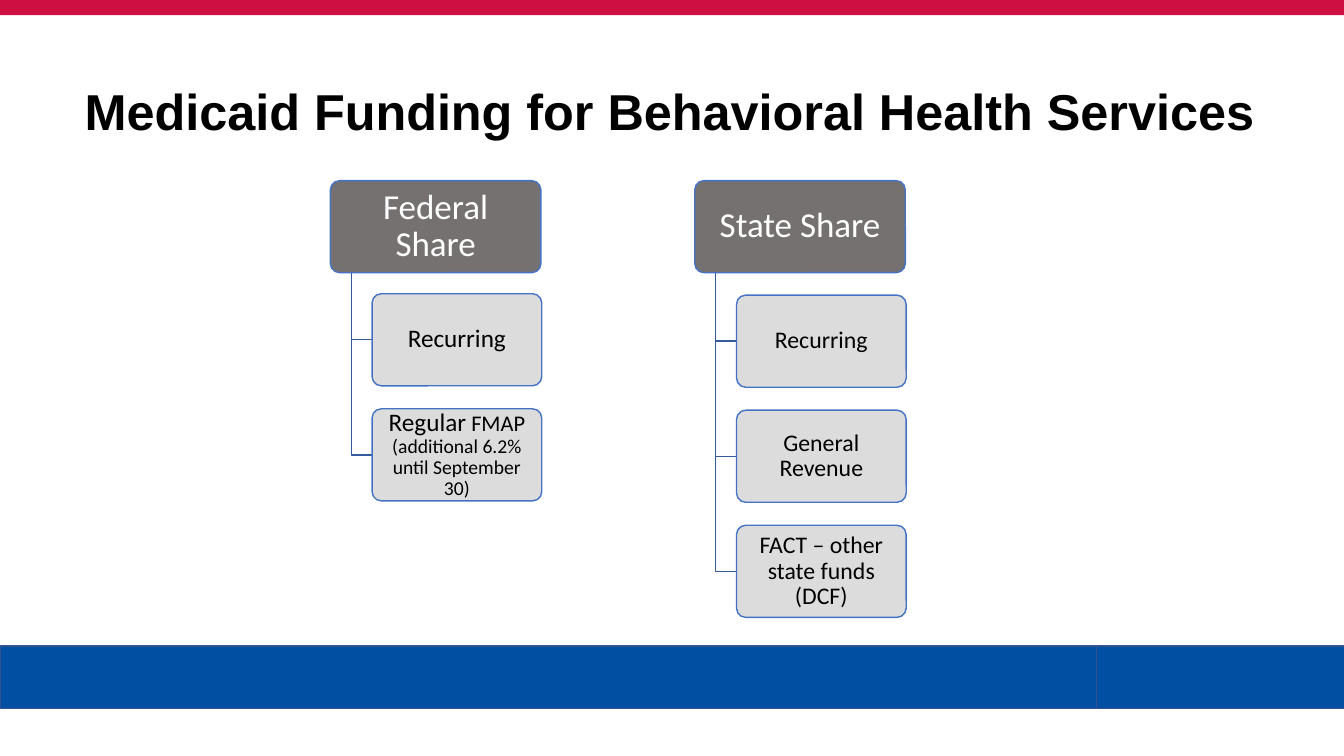
from dataclasses import dataclass

from lxml import etree
from pptx import Presentation
from pptx.dml.color import RGBColor
from pptx.enum.shapes import MSO_SHAPE
from pptx.enum.text import MSO_ANCHOR, PP_ALIGN
from pptx.oxml.ns import qn
from pptx.util import Pt

RECTANGLE = MSO_SHAPE.RECTANGLE
ROUNDED = MSO_SHAPE.ROUNDED_RECTANGLE
MIDDLE = MSO_ANCHOR.MIDDLE
LEFT, CENTER = PP_ALIGN.LEFT, PP_ALIGN.CENTER


@dataclass(frozen=True)
class Theme:
    """Colours, fonts and type sizes of the slide."""
    red: str = "CD1041"
    blue: str = "004FA2"
    band_line: str = "325491"
    head_fill: str = "767171"
    item_fill: str = "D9D9D9"
    box_line: str = "4472C4"
    branch: str = "365B9D"
    black: str = "000000"
    white: str = "FFFFFF"
    title_font: str = "Arial"
    body_font: str = "Calibri"
    title_size: float = 36
    head_size: float = 25
    federal_size: float = 18
    state_size: float = 17
    fmap_size: float = 16
    note_size: float = 14


THEME = Theme()
HEAD_TOP, HEAD_WIDTH, BOX_HEIGHT = 129, 150.4, 65.8
ITEM_INDENT, ITEM_WIDTH, ITEM_STEP = 29.8, 121.2, 82.2
TRUNK_INDENT = 15


def color(value):
    """Turn a hex string into a colour."""
    return RGBColor.from_string(value)


def add_span(para, text, size, ink, font, bold=False):
    """Append one formatted run to a paragraph."""
    span = para.add_run()
    span.text = text
    span.font.size = Pt(size)
    span.font.name = font
    span.font.bold = bold
    span.font.color.rgb = color(ink)


def add_panel(page, kind, left, top, width, height, fill, line=None):
    """Add a filled shape with an optional outline."""
    panel = page.shapes.add_shape(kind, Pt(left), Pt(top), Pt(width), Pt(height))
    panel.shadow.inherit = False
    panel.fill.solid()
    panel.fill.fore_color.rgb = color(fill)
    if line:
        panel.line.color.rgb = color(line)
        panel.line.width = Pt(1)
    else:
        panel.line.fill.background()
    return panel


def add_box(page, left, top, width, fill, ink, spans):
    """Add a rounded box with centred text."""
    box = add_panel(page, ROUNDED, left, top, width, BOX_HEIGHT, fill, THEME.box_line)
    box.adjustments[0] = 0.1
    frame = box.text_frame
    frame.word_wrap = True
    frame.vertical_anchor = MIDDLE
    frame.margin_left = frame.margin_right = Pt(5)
    frame.margin_top = frame.margin_bottom = Pt(3.5)
    para = frame.paragraphs[0]
    para.alignment = CENTER
    para.line_spacing = 0.9
    for text, size in spans:
        add_span(para, text, size, ink, THEME.body_font)
    return box


def set_opacity(box, percent):
    """Make the solid fill of a box partly transparent."""
    tint = box.fill._xPr.find(qn("a:solidFill"))[0]
    etree.SubElement(tint, qn("a:alpha")).set("val", str(percent * 1000))


def add_branch(page, left, top, right, bottom):
    """Draw an elbow line down and then right."""
    builder = page.shapes.build_freeform(Pt(left), Pt(top))
    corners = [(Pt(left), Pt(bottom)), (Pt(right), Pt(bottom))]
    builder.add_line_segments(corners, close=False)
    branch = builder.convert_to_shape()
    branch.shadow.inherit = False
    branch.fill.background()
    branch.line.color.rgb = color(THEME.branch)
    branch.line.width = Pt(1)


def add_share(page, left, first_top, name, items):
    """Add a heading box with its items hanging below."""
    add_box(page, left, HEAD_TOP, HEAD_WIDTH, THEME.head_fill, THEME.white,
            [(name, THEME.head_size)])
    item_left = left + ITEM_INDENT
    for index, spans in enumerate(items):
        top = first_top + index * ITEM_STEP
        add_branch(page, left + TRUNK_INDENT, HEAD_TOP + BOX_HEIGHT,
                   item_left, top + BOX_HEIGHT / 2)
        box = add_box(page, item_left, top, ITEM_WIDTH, THEME.item_fill,
                      THEME.black, spans)
        set_opacity(box, 90)


def set_title(page, text):
    """Place and format the title."""
    title = page.shapes.title
    title.left, title.top, title.width, title.height = Pt(53.3), Pt(29.5), Pt(852.5), Pt(104.4)
    title.text_frame.vertical_anchor = MIDDLE
    para = title.text_frame.paragraphs[0]
    para.alignment = LEFT
    para.line_spacing = 0.9
    add_span(para, text, THEME.title_size, THEME.black, THEME.title_font, bold=True)


def main():
    """Build and save the slide."""
    deck = Presentation()
    deck.slide_width, deck.slide_height = Pt(960), Pt(540)
    page = deck.slides.add_slide(deck.slide_layouts[5])
    for left, width in ((0, 807.8), (783.4, 179.3)):
        add_panel(page, RECTANGLE, left, 461.5, width, 44.6, THEME.blue, THEME.band_line)
    add_panel(page, RECTANGLE, 0, 0, 963.4, 10.8, THEME.red)
    set_title(page, "Medicaid Funding for Behavioral Health Services")
    add_share(page, 236, 209.8, "Federal Share", [
        [("Recurring", THEME.federal_size)],
        [("Regular", THEME.federal_size), (" FMAP ", THEME.fmap_size),
         ("(additional 6.2% until September 30)", THEME.note_size)],
    ])
    state_items = ["Recurring", "General Revenue", "FACT – other state funds (DCF)"]
    add_share(page, 496.3, 210.8, "State Share",
              [[(text, THEME.state_size)] for text in state_items])
    deck.save("out.pptx")


if __name__ == "__main__":
    main()
